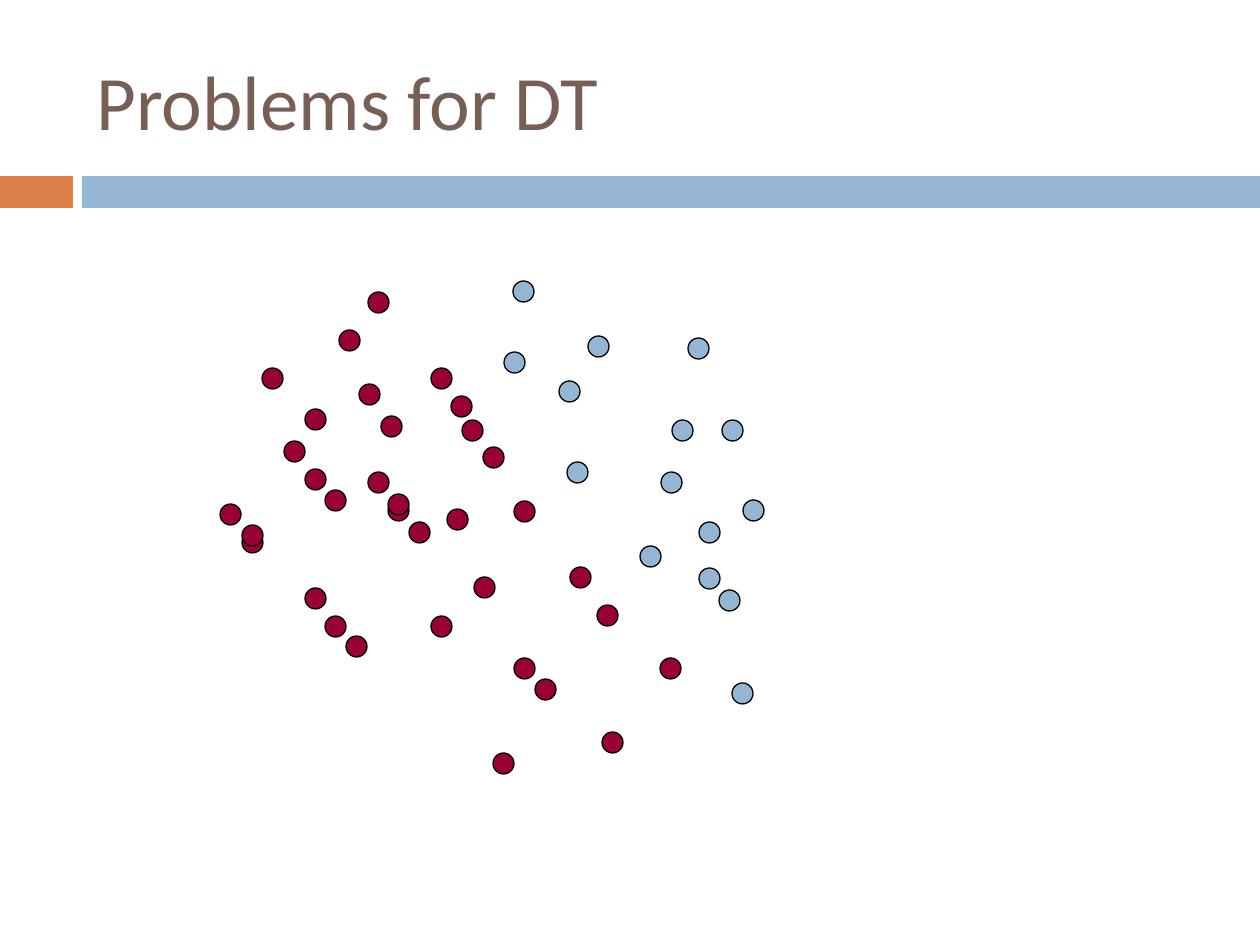
from pptx import Presentation
from pptx.dml.color import RGBColor
from pptx.enum.shapes import MSO_SHAPE as SHAPE
from pptx.enum.text import MSO_ANCHOR as ANCHOR, PP_ALIGN as ALIGN
from pptx.util import Pt

PX = 914400 / 126  # EMU per px
DOT = 21  # dot diameter in px
COLORS = {
    "title": "775F55",
    "accent": "DD8047",
    "blue": "94B6D2",
    "red": "990033",
    "outline": "000000",
}

# Left and top of every dot, by class
RED_DOTS = [
    (262, 368), (284, 441), (431, 368), (220, 504), (368, 472), (462, 420),
    (368, 292), (305, 469), (451, 396), (242, 532), (388, 500), (483, 447),
    (305, 588), (660, 658), (325, 616), (431, 616), (514, 658), (447, 509),
    (514, 501), (602, 732), (570, 567), (346, 636), (597, 605), (535, 679),
    (493, 753), (359, 384), (339, 330), (474, 577), (242, 525), (388, 494),
    (381, 416), (325, 490), (409, 522), (305, 409),
]
BLUE_DOTS = [
    (567, 462), (588, 336), (640, 546), (559, 381), (699, 568), (672, 420),
    (504, 352), (513, 281), (661, 472), (732, 683), (719, 590), (699, 522),
    (743, 500), (688, 338), (722, 420),
]


def px(n):
    return round(n * PX)


def rgb(name):
    return RGBColor.from_string(COLORS[name])


def add_filled(s, kind, box, color):
    sp = s.shapes.add_shape(kind, *map(px, box))
    sp.shadow.inherit = False
    sp.fill.solid()
    sp.fill.fore_color.rgb = rgb(color)
    return sp


def add_band(s, left, width, color):
    sp = add_filled(s, SHAPE.RECTANGLE, (left, 176, width, 32), color)
    sp.line.fill.background()


def add_dots(s, dots, color):
    for left, top in dots:
        sp = add_filled(s, SHAPE.OVAL, (left, top, DOT, DOT), color)
        sp.line.color.rgb = rgb("outline")
        sp.line.width = Pt(0.75)


def set_title(s, text):
    sp = s.shapes.title
    sp.left, sp.top, sp.width, sp.height = map(px, (84, 32, 1124, 136))
    tf = sp.text_frame
    tf.vertical_anchor = ANCHOR.MIDDLE
    p = tf.paragraphs[0]
    p.alignment = ALIGN.LEFT
    r = p.add_run()
    r.text = text
    r.font.name = "Calibri"
    r.font.size = Pt(44)
    r.font.color.rgb = rgb("title")


def main():
    prs = Presentation()
    prs.slide_width, prs.slide_height = px(1260), px(945)
    s = prs.slides.add_slide(prs.slide_layouts[5])

    # Title and the divider below it
    set_title(s, "Problems for DT")
    add_band(s, 0, 73, "accent")
    add_band(s, 82, 1178, "blue")

    # Two classes of points
    add_dots(s, RED_DOTS, "red")
    add_dots(s, BLUE_DOTS, "blue")

    prs.save("out.pptx")


if __name__ == "__main__":
    main()
